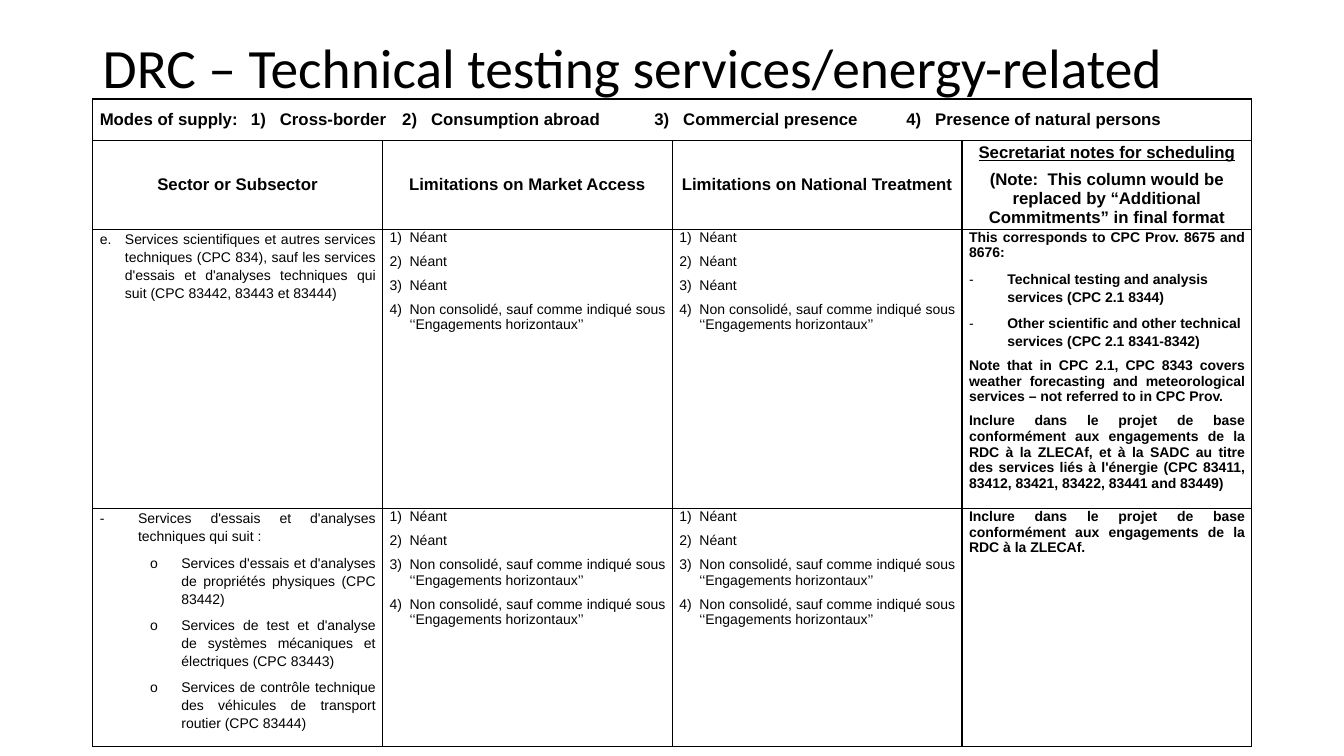
from lxml import etree
from pptx import Presentation
from pptx.dml.color import RGBColor
from pptx.enum.text import MSO_ANCHOR, PP_ALIGN
from pptx.oxml.ns import qn
from pptx.util import Inches, Pt

MID, TOP = MSO_ANCHOR.MIDDLE, MSO_ANCHOR.TOP
LEFT, MIDST, JUST = PP_ALIGN.LEFT, PP_ALIGN.CENTER, PP_ALIGN.JUSTIFY
WIDE, HIGH = Inches(13.33), Inches(7.5)
INK = "000000"
EDGE, SPAN = 6.9, 86.25
ROWS = [5.47, 10.98, 34.66, 29.63]

STYLES = {
    "mode": dict(size=12, bold=True, align=JUST, tabs=[0.5]),
    "head": dict(size=12, bold=True, align=MIDST, tabs=[0.5]),
    "under": dict(size=12, bold=True, align=MIDST, tabs=[0.5], line=True),
    "note": dict(size=10, bold=True, align=JUST, tabs=[0.5]),
    "point": dict(size=10, bold=True, align=LEFT, hang=(0.38, 0.38),
                  mark="-", lead=1.15),
    "item": dict(size=10, align=JUST, hang=(0.25, 0.25), lead=1.15),
    "dash": dict(size=10, align=JUST, hang=(0.38, 0.38), mark="-", lead=1.15),
    "ring": dict(size=10, align=JUST, hang=(0.81, 0.31), mark="o", lead=1.15,
                 level=1),
    "term": dict(size=10, align=JUST, hang=(0.2, 0.2), tabs=[0.5]),
}

NONE = "Néant"
BOUND = "Non consolidé, sauf comme indiqué sous ‘‘Engagements horizontaux’’"


def across(share):
    """Return a percentage of the slide's width."""
    return int(WIDE * share / 100)


def down(share):
    """Return a percentage of the slide's height."""
    return int(HIGH * share / 100)


def color(code):
    """Turn a hex string into a colour."""
    return RGBColor.from_string(code)


def add(parent, tag, **attrs):
    """Append a drawing element with its attributes."""
    node = etree.SubElement(parent, qn(f"a:{tag}"))
    for key, value in attrs.items():
        node.set(key, str(value))
    return node


def set_font(font, name, size, bold=False, line=False):
    """Set the face, size, weight and colour of a font."""
    font.name, font.size = name, Pt(size)
    font.bold, font.underline = bold, line
    font.color.rgb = color(INK)


def set_para(para, text, size, align, bold=False, line=False, hang=(0, 0),
             mark=None, tabs=(), lead=None, level=0):
    """Fill one paragraph with text and give it its layout."""
    para.text = text
    para.level = level
    props = para._p.get_or_add_pPr()
    left, back = hang
    props.set("marL", str(Inches(left)))
    props.set("indent", str(-Inches(back)))
    if mark:
        add(props, "buFont", typeface="Arial")
        add(props, "buChar", char=mark)
    else:
        add(props, "buNone")
    if tabs:
        stops = add(props, "tabLst")
        for tab in tabs:
            add(stops, "tab", pos=Inches(tab), algn="l")
    para.alignment = align
    para.space_after = Pt(3)
    if lead:
        para.line_spacing = lead
    for run in para.runs:
        set_font(run.font, "Arial", size, bold, line)


def set_cell(cell, paras, anchor):
    """Fill a cell with styled paragraphs."""
    cell.vertical_anchor = anchor
    cell.margin_left = cell.margin_right = Inches(0.07)
    cell.margin_top = cell.margin_bottom = 0
    frame = cell.text_frame
    for num, (style, text) in enumerate(paras):
        para = frame.add_paragraph() if num else frame.paragraphs[0]
        set_para(para, text, **STYLES[style])
        para.space_before = Pt(3 if num else 0)


def set_edge(cell):
    """Draw black borders round a cell and clear its fill."""
    props = cell._tc.get_or_add_tcPr()
    for side in ("lnL", "lnR", "lnT", "lnB"):
        fill = add(add(props, side, w=Pt(1)), "solidFill")
        add(fill, "srgbClr", val=INK)
    cell.fill.background()


def terms(*texts):
    """Number the limits for the four modes of supply."""
    return [("term", f"{num})\t{text}") for num, text in enumerate(texts, 1)]


def add_title(slide, text):
    """Add the slide's heading."""
    box = slide.shapes.add_textbox(across(EDGE), down(5.33),
                                   across(SPAN), down(7.87))
    frame = box.text_frame
    frame.word_wrap, frame.vertical_anchor = True, MID
    frame.text = text
    para = frame.paragraphs[0]
    para.line_spacing = 0.9
    set_font(para.runs[0].font, "Calibri", 39.6)


def add_grid(slide, rows):
    """Add the table of commitments."""
    count = len(rows[1])
    table = slide.shapes.add_table(len(rows), count, across(EDGE), down(13.1),
                                   across(SPAN), down(sum(ROWS))).table
    table.first_row = table.horz_banding = False
    for col in table.columns:
        col.width = across(SPAN / count)
    for row, share in zip(table.rows, ROWS):
        row.height = down(share)
    for cell in table.iter_cells():
        set_edge(cell)
    table.cell(0, 0).merge(table.cell(0, count - 1))
    for r, row in enumerate(rows):
        for c, paras in enumerate(row):
            set_cell(table.cell(r, c), paras, MID if r < 2 else TOP)


def main():
    """Build the slide and save it."""
    deck = Presentation()
    deck.slide_width, deck.slide_height = WIDE, HIGH
    slide = deck.slides.add_slide(deck.slide_layouts[6])
    add_title(slide, "DRC – Technical testing services/energy-related")
    modes = [("mode", "Modes of supply: \t1)   Cross-border \t"
              "2)   Consumption abroad \t3)   Commercial presence\t"
              "4)   Presence of natural persons")]
    heads = [[("head", text)] for text in (
        "Sector or Subsector", "Limitations on Market Access",
        "Limitations on National Treatment")]
    heads.append([
        ("under", "Secretariat notes for scheduling"),
        ("head", "(Note:  This column would be replaced by “Additional "
         "Commitments” in final format")])
    science = [("item", "e.\tServices scientifiques et autres services "
                "techniques (CPC 834), sauf les services d'essais et "
                "d'analyses techniques qui suit (CPC 83442, 83443 et 83444)")]
    notes = [
        ("note", "This corresponds to CPC Prov. 8675 and 8676:"),
        ("point", "Technical testing and analysis services (CPC 2.1 8344)"),
        ("point", "Other scientific and other technical services "
         "(CPC 2.1 8341-8342)"),
        ("note", "Note that in CPC 2.1, CPC 8343 covers weather forecasting "
         "and meteorological services – not referred to in CPC Prov. "),
        ("note", "Inclure dans le projet de base conformément aux engagements "
         "de la RDC à la ZLECAf, et à la SADC au titre des services liés à "
         "l'énergie (CPC 83411, 83412, 83421, 83422, 83441 and 83449)")]
    tests = [
        ("dash", "Services d'essais et d'analyses techniques qui suit :"),
        ("ring", "Services d'essais et d'analyses de propriétés physiques "
         "(CPC 83442)"),
        ("ring", "Services de test et d'analyse de systèmes mécaniques et "
         "électriques (CPC 83443)"),
        ("ring", "Services de contrôle technique des véhicules de transport "
         "routier (CPC 83444)")]
    base = [("note", "Inclure dans le projet de base conformément aux "
             "engagements de la RDC à la ZLECAf.")]
    free = terms(NONE, NONE, NONE, BOUND)
    part = terms(NONE, NONE, BOUND, BOUND)
    add_grid(slide, [[modes], heads, [science, free, free, notes],
                     [tests, part, part, base]])
    deck.save("out.pptx")


if __name__ == "__main__":
    main()
